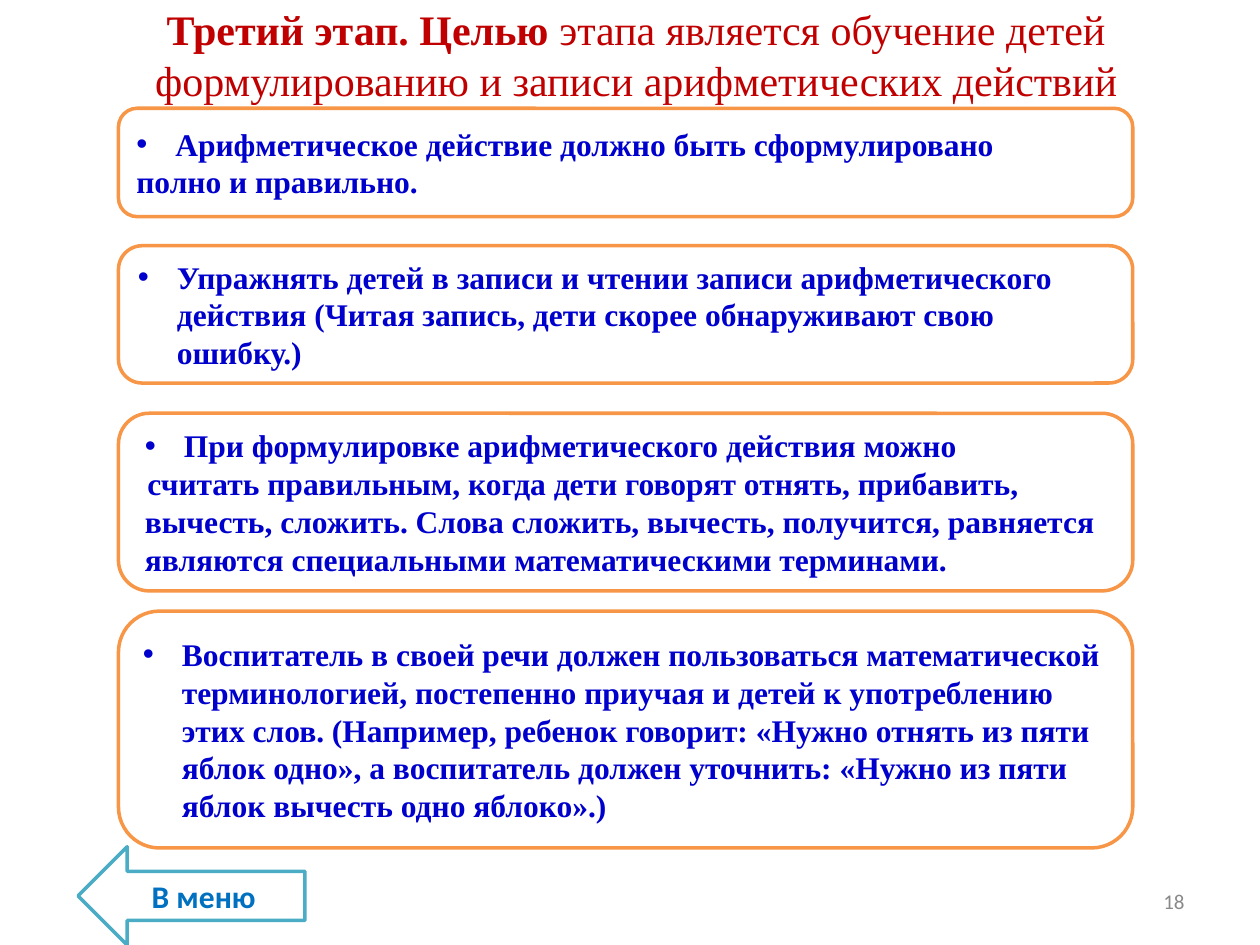
from pptx import Presentation
from pptx.dml.color import RGBColor
from pptx.enum import shapes, text
from pptx.oxml import parse_xml
from pptx.oxml.ns import nsdecls
from pptx.util import Inches, Pt

WHITE = RGBColor(0xFF, 0xFF, 0xFF)
RED = RGBColor(0xC0, 0x00, 0x00)
ORANGE = RGBColor(0xF7, 0x96, 0x46)
NAVY = RGBColor(0x00, 0x00, 0xCC)
TEAL = RGBColor(0x4B, 0xAC, 0xC6)
BLUE = RGBColor(0x00, 0x70, 0xC0)
GREY = RGBColor(0x89, 0x89, 0x89)
SERIF, SANS = "Times New Roman", "Calibri"

CARD_LEFT, CARD_WIDTH = 0.94, 8.05
# Each card: top, height, paragraphs as (text, margin, indent, bulleted)
CARDS = [
    (0.86, 0.86, [
        ("Арифметическое действие должно быть сформулировано", 0.31, -0.31, True),
        ("полно и правильно.", 0, 0, False)]),
    (1.95, 1.09, [
        ("Упражнять детей в записи и чтении записи арифметического действия "
         "(Читая запись, дети скорее обнаруживают свою ошибку.)", 0.31, -0.31, True)]),
    (3.28, 1.41, [
        ("При формулировке арифметического действия можно", 0.35, -0.31, True),
        ("считать правильным, когда дети говорят отнять, прибавить, вычесть, "
         "сложить. Слова сложить, вычесть, получится, равняется являются "
         "специальными математическими терминами.", 0.04, 0.02, False)]),
    (4.85, 1.88, [
        ("Воспитатель в своей речи должен пользоваться математической "
         "терминологией, постепенно приучая и детей к употреблению этих слов. "
         "(Например, ребенок говорит: «Нужно отнять из пяти яблок одно», "
         "а воспитатель должен уточнить: «Нужно из пяти яблок вычесть "
         "одно яблоко».)", 0.31, -0.31, True)]),
]


def add_span(para, words, *, size=18, font=SERIF, color=NAVY, bold=True):
    span = para.add_run()
    span.text = words
    span.font.size = Pt(size)
    span.font.name = font
    span.font.bold = bold
    span.font.color.rgb = color


def set_indent(para, margin, indent, bulleted):
    properties = para._p.get_or_add_pPr()
    properties.set("marL", str(Inches(margin)))
    properties.set("indent", str(Inches(indent)))
    if bulleted:
        properties.append(parse_xml(f'<a:buFont {nsdecls("a")} typeface="Arial"/>'))
        properties.append(parse_xml(f'<a:buChar {nsdecls("a")} char="•"/>'))


def add_outlined(slide, kind, left, top, width, height, color):
    shape = slide.shapes.add_shape(
        kind, Inches(left), Inches(top), Inches(width), Inches(height))
    shape.shadow.inherit = False
    shape.fill.solid()
    shape.fill.fore_color.rgb = WHITE
    shape.line.color.rgb = color
    shape.line.width = Pt(2)
    shape.text_frame.word_wrap = True
    shape.text_frame.vertical_anchor = text.MSO_ANCHOR.MIDDLE
    return shape


def add_title(slide):
    title = slide.shapes.title
    title.left, title.top = Inches(0.55), Inches(0)
    title.width, title.height = Inches(9), Inches(0.86)
    title.text_frame.vertical_anchor = text.MSO_ANCHOR.MIDDLE
    para = title.text_frame.paragraphs[0]
    para.alignment = text.PP_ALIGN.CENTER
    add_span(para, "Третий этап. Целью ", size=24, color=RED)
    add_span(para, "этапа является обучение детей формулированию и записи "
             "арифметических действий", size=24, color=RED, bold=False)


def add_card(slide, top, height, items):
    card = add_outlined(slide, shapes.MSO_SHAPE.ROUNDED_RECTANGLE,
                        CARD_LEFT, top, CARD_WIDTH, height, ORANGE)
    card.adjustments[0] = 0.173
    frame = card.text_frame
    for index, (words, margin, indent, bulleted) in enumerate(items):
        para = frame.add_paragraph() if index else frame.paragraphs[0]
        para.alignment = text.PP_ALIGN.LEFT
        set_indent(para, margin, indent, bulleted)
        add_span(para, words)


def add_menu_arrow(slide):
    arrow = add_outlined(slide, shapes.MSO_SHAPE.LEFT_ARROW,
                         0.62, 6.72, 1.8, 0.78, TEAL)
    para = arrow.text_frame.paragraphs[0]
    para.alignment = text.PP_ALIGN.CENTER
    add_span(para, "В меню", font=SANS, color=BLUE)


def add_page_number(slide):
    box = slide.shapes.add_textbox(Inches(7.17), Inches(6.95), Inches(2.33), Inches(0.4))
    box.text_frame.word_wrap = True
    box.text_frame.vertical_anchor = text.MSO_ANCHOR.MIDDLE
    para = box.text_frame.paragraphs[0]
    para.alignment = text.PP_ALIGN.RIGHT
    add_span(para, "18", size=12, font=SANS, color=GREY, bold=False)


def main():
    deck = Presentation()
    deck.slide_width, deck.slide_height = Inches(10), Inches(7.5)
    slide = deck.slides.add_slide(deck.slide_layouts[5])  # title only
    add_title(slide)
    for top, height, items in CARDS:
        add_card(slide, top, height, items)
    add_menu_arrow(slide)
    add_page_number(slide)
    deck.save("out.pptx")


if __name__ == "__main__":
    main()
